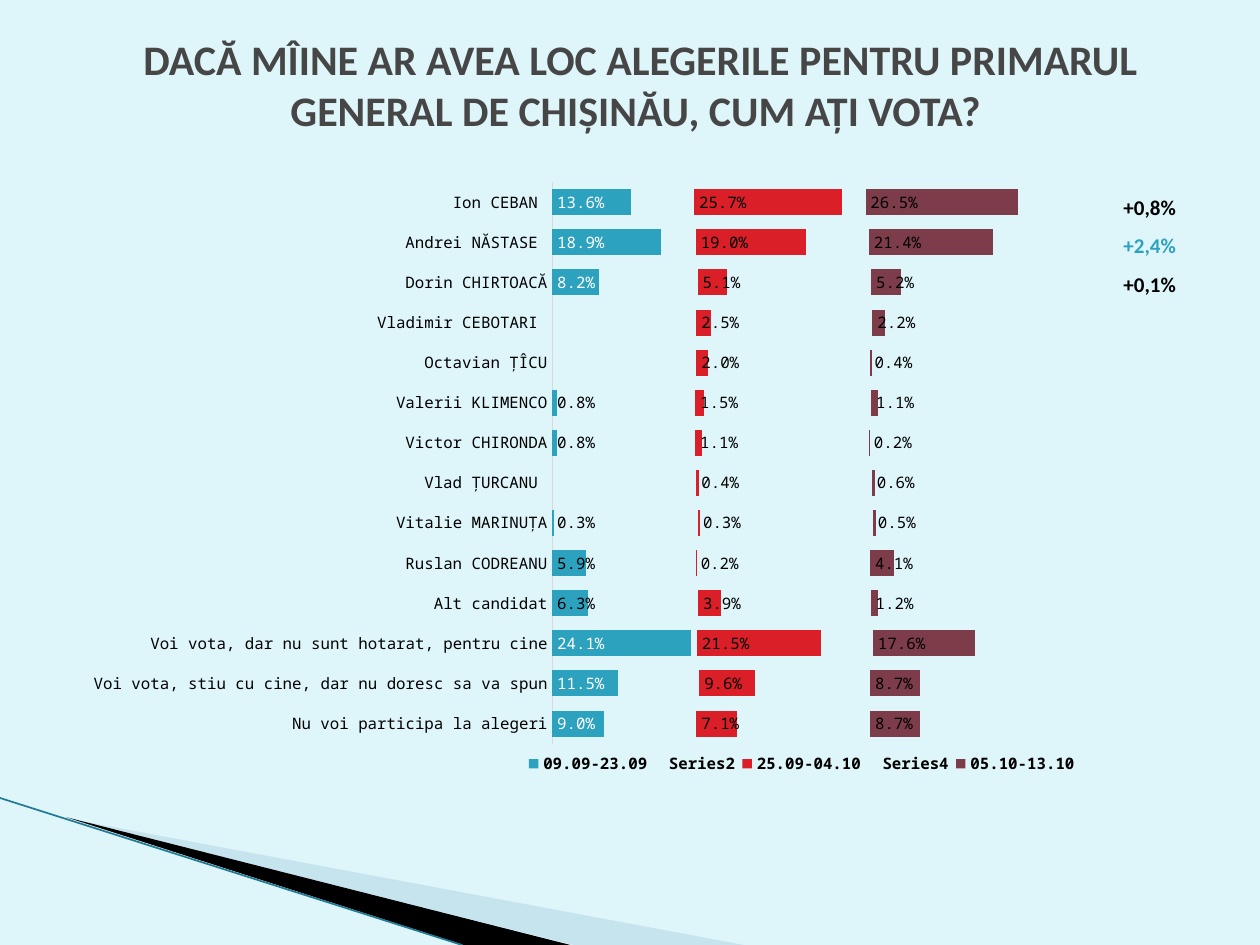
from pptx import Presentation
from pptx.chart.data import CategoryChartData
from pptx.dml.color import RGBColor
from pptx.enum import chart as charts, lang, shapes, text
from pptx.oxml import parse_xml
from pptx.oxml.ns import nsdecls, qn
from pptx.util import Pt

BODY_FONT, CHART_FONT = "Calibri", "Noto Sans Mono"
TEAL, RED, PLUM, BLACK, WHITE = "2DA2BF", "DA1F28", "7D3C4A", "000000", "FFFFFF"
NO_TABLE_STYLE = "{2D5ABB26-0587-4C30-8999-92F81FD0307C}"

TITLE = "DACĂ MÎINE AR AVEA LOC ALEGERILE PENTRU PRIMARUL GENERAL DE CHIŞINĂU, CUM AŢI VOTA? "
CHANGES = [("+0,8%", BLACK), ("+2,4%", TEAL), ("+0,1%", BLACK)]
WAVES = [("09.09-23.09", TEAL), ("25.09-04.10", RED), ("05.10-13.10", PLUM)]
# Bottom row first; one share per wave
ANSWERS = [
    ("Nu voi participa la alegeri", 0.09, 0.071, 0.087),
    ("Voi vota, stiu cu cine, dar nu doresc sa va spun", 0.115, 0.096, 0.087),
    ("Voi vota, dar nu sunt hotarat, pentru cine", 0.241, 0.215, 0.176),
    ("Alt candidat", 0.063, 0.039, 0.012),
    ("Ruslan CODREANU", 0.059, 0.002, 0.041),
    ("Vitalie MARINUȚA", 0.003, 0.003, 0.005),
    ("Vlad ȚURCANU ", None, 0.004, 0.006),
    ("Victor CHIRONDA", 0.008, 0.011, 0.002),
    ("Valerii KLIMENCO", 0.008, 0.015, 0.011),
    ("Octavian ȚÎCU", None, 0.02, 0.004),
    ("Vladimir CEBOTARI ", None, 0.025, 0.022),
    ("Dorin CHIRTOACĂ", 0.082, 0.051, 0.052),
    ("Andrei NĂSTASE ", 0.189, 0.19, 0.214),
    ("Ion CEBAN ", 0.136, 0.257, 0.265),
]
COLUMN_WIDTHS = (0.25, 0.30)  # each spacer fills its wave's column to this width
WHITE_LABELS = (0, 1, 2, 11, 12, 13)


def rgb(value):
    return RGBColor.from_string(value)


def style_font(font, size, color, name=CHART_FONT, bold=False):
    font.size, font.name, font.bold = Pt(size), name, bold
    font.color.rgb = rgb(color)


def write(frame, content, size, color, **style):
    para = frame.paragraphs[0]
    para.alignment = text.PP_ALIGN.CENTER
    span = para.add_run()
    span.text = content
    style_font(span.font, size, color, **style)
    span.font.language_id = lang.MSO_LANGUAGE_ID.ROMANIAN


def add_wedge(page, points, color, opacity=None):
    start, *rest = [(Pt(x), Pt(y)) for x, y in points]
    builder = page.shapes.build_freeform(*start, scale=1.0)
    builder.add_line_segments(rest, close=True)
    wedge = builder.convert_to_shape()
    wedge.shadow.inherit = False
    wedge.fill.solid()
    wedge.fill.fore_color.rgb = rgb(color)
    wedge.line.fill.background()
    if opacity is not None:
        fill = wedge._element.spPr.find(qn("a:solidFill"))
        fill[0].append(parse_xml(f'<a:alpha {nsdecls("a")} val="{opacity * 1000}"/>'))


def add_corner(page, left, top, width, height):
    right, bottom = left + width, top + height
    # Pale and black wedges
    add_wedge(page, [(left + 40, top + 12), (right, bottom), (left + 328, bottom)],
              "A0CBDC", opacity=40)
    add_wedge(page, [(left + 38, top + 11), (left + 326, bottom), (left + 265, bottom)],
              BLACK)
    # Edge line
    edge = page.shapes.add_connector(shapes.MSO_CONNECTOR.STRAIGHT, Pt(left), Pt(top),
                                     Pt(left + 264), Pt(bottom))
    edge.line.color.rgb = rgb("1F7A94")
    edge.line.width = Pt(0.95)
    edge._element.spPr.append(parse_xml(f'<a:effectLst {nsdecls("a")}/>'))


def add_title(page, left, top, width, height):
    title = page.shapes.title
    title.left, title.top, title.width, title.height = map(Pt, (left, top, width, height))
    frame = title.text_frame
    frame.word_wrap = True
    frame.auto_size = text.MSO_AUTO_SIZE.NONE
    frame.vertical_anchor = text.MSO_ANCHOR.MIDDLE
    write(frame, TITLE, 24, "464646", name=BODY_FONT, bold=True)


def add_changes(page, left, top, width, height):
    frame = page.shapes.add_table(len(CHANGES), 1, *map(Pt, (left, top, width, height)))
    table = frame.table
    table.first_row = table.horz_banding = False
    table._tbl.tblPr.find(qn("a:tableStyleId")).text = NO_TABLE_STYLE
    for row, (change, color) in enumerate(CHANGES):
        cell = table.cell(row, 0)
        cell.fill.background()
        cell.vertical_anchor = text.MSO_ANCHOR.MIDDLE
        write(cell.text_frame, change, 12, color, name=BODY_FONT, bold=True)


def manual_layout(x, y, width, height, inner=False):
    target = '<c:layoutTarget val="inner"/>' if inner else ""
    return parse_xml(
        f'<c:layout {nsdecls("c")}><c:manualLayout>{target}'
        '<c:xMode val="edge"/><c:yMode val="edge"/>'
        f'<c:x val="{x}"/><c:y val="{y}"/><c:w val="{width}"/><c:h val="{height}"/>'
        '</c:manualLayout></c:layout>')


def remove_layout(element):
    for old in element.findall(qn("c:layout")):
        element.remove(old)


def spacer_width(column, value):
    return round(column - (value or 0) + 0.0001, 2)  # halves round up


def poll_data():
    data = CategoryChartData(number_format="0.0%")
    names, *shares = zip(*ANSWERS)
    data.categories = names
    for index, ((wave, _), values) in enumerate(zip(WAVES, shares)):
        data.add_series(wave, values)
        if index < len(COLUMN_WIDTHS):
            data.add_series(f"Series{2 * index + 2}",
                            [spacer_width(COLUMN_WIDTHS[index], value) for value in values])
    return data


def style_wave(series, color):
    series.format.fill.solid()
    series.format.fill.fore_color.rgb = rgb(color)
    labels = series.data_labels
    labels.show_value = True
    labels.number_format, labels.number_format_is_linked = "0.0%", False
    labels.position = charts.XL_LABEL_POSITION.INSIDE_BASE
    style_font(labels.font, 9, BLACK)


def add_poll(page, left, top, width, height):
    chart = page.shapes.add_chart(charts.XL_CHART_TYPE.BAR_STACKED,
                                  *map(Pt, (left, top, width, height)), poll_data()).chart
    chart.has_title = False
    style_font(chart.font, 10, BLACK)

    # Bars and spacers
    plot = chart.plots[0]
    plot.gap_width, plot.overlap, plot.vary_by_categories = 54, 100, False
    series = list(plot.series)
    for wave, (_, color) in zip(series[::2], WAVES):
        style_wave(wave, color)
    for spacer in series[1::2]:
        spacer.format.fill.background()
    for index in WHITE_LABELS:
        label = series[0].points[index].data_label
        style_font(label.font, 9, WHITE)
        label.position = charts.XL_LABEL_POSITION.INSIDE_BASE

    # Axes
    answers, shares = chart.category_axis, chart.value_axis
    answers.major_tick_mark = charts.XL_TICK_MARK.NONE
    answers.format.line.color.rgb = rgb("D9D9D9")
    answers.format.line.width = Pt(0.75)
    style_font(answers.tick_labels.font, 9, BLACK)
    shares.visible = shares.has_major_gridlines = False
    shares.minimum_scale, shares.maximum_scale = 0, 0.9

    # Legend
    chart.has_legend = True
    legend = chart.legend
    legend.position = charts.XL_LEGEND_POSITION.BOTTOM
    legend.include_in_layout = False
    style_font(legend.font, 9, BLACK, bold=True)
    remove_layout(legend._element)
    legend._element.find(qn("c:legendPos")).addnext(manual_layout(0.44, 0.927, 0.55, 0.04))

    # Plot area
    area = chart._chartSpace.chart.plotArea
    remove_layout(area)
    area.insert(0, manual_layout(0.47, 0.02, 0.51, 0.895, inner=True))


def main():
    deck = Presentation()
    deck.slide_width, deck.slide_height = Pt(720), Pt(540)
    page = deck.slides.add_slide(deck.slide_layouts[5])
    page.background.fill.solid()
    page.background.fill.fore_color.rgb = rgb("DEF5FA")
    add_corner(page, 0, 456, 425, 84)
    add_title(page, 42, 18, 648, 60)
    add_changes(page, 624, 108, 66, 66)
    add_poll(page, 42, 97, 582, 358.5)
    deck.save("out.pptx")


if __name__ == "__main__":
    main()
